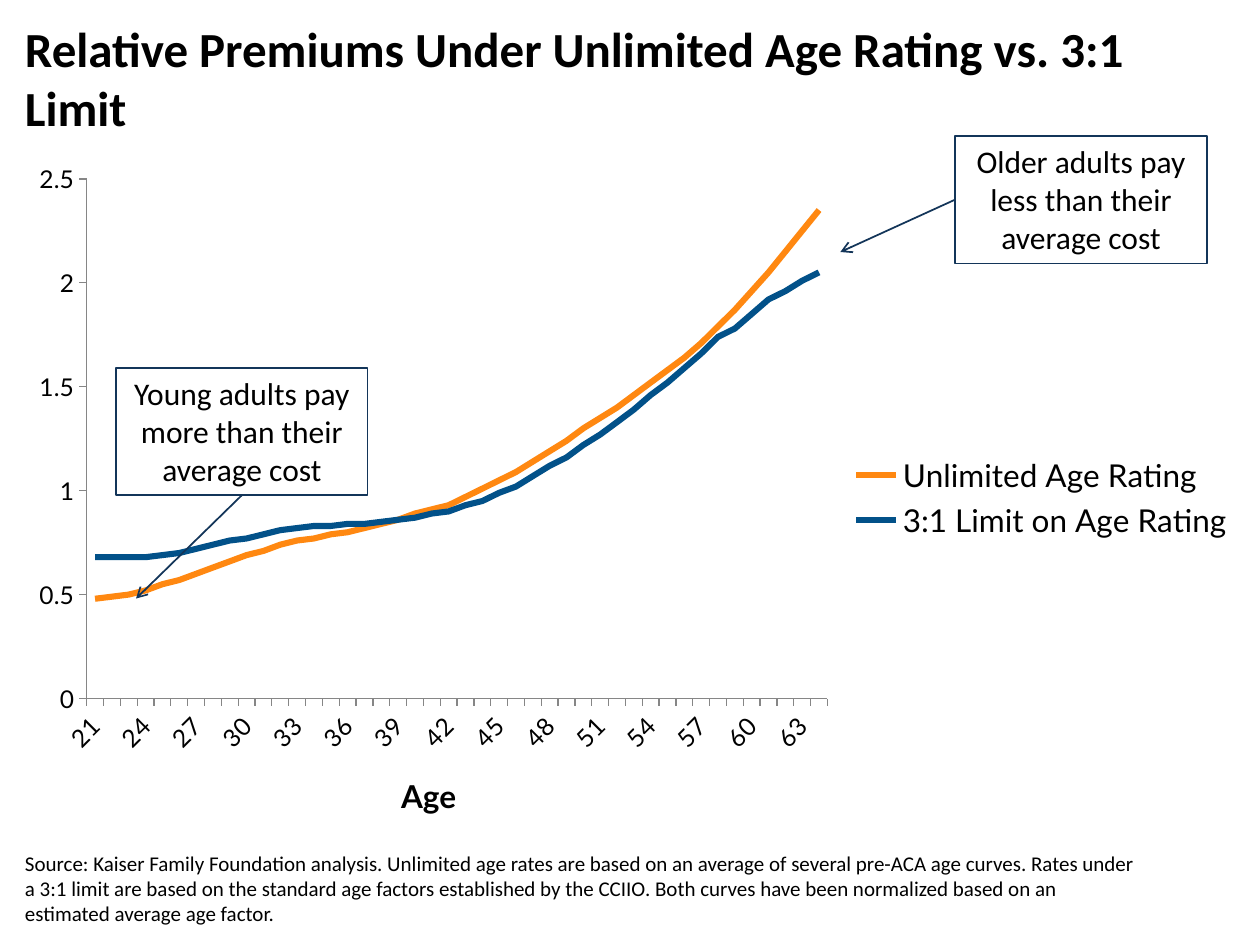
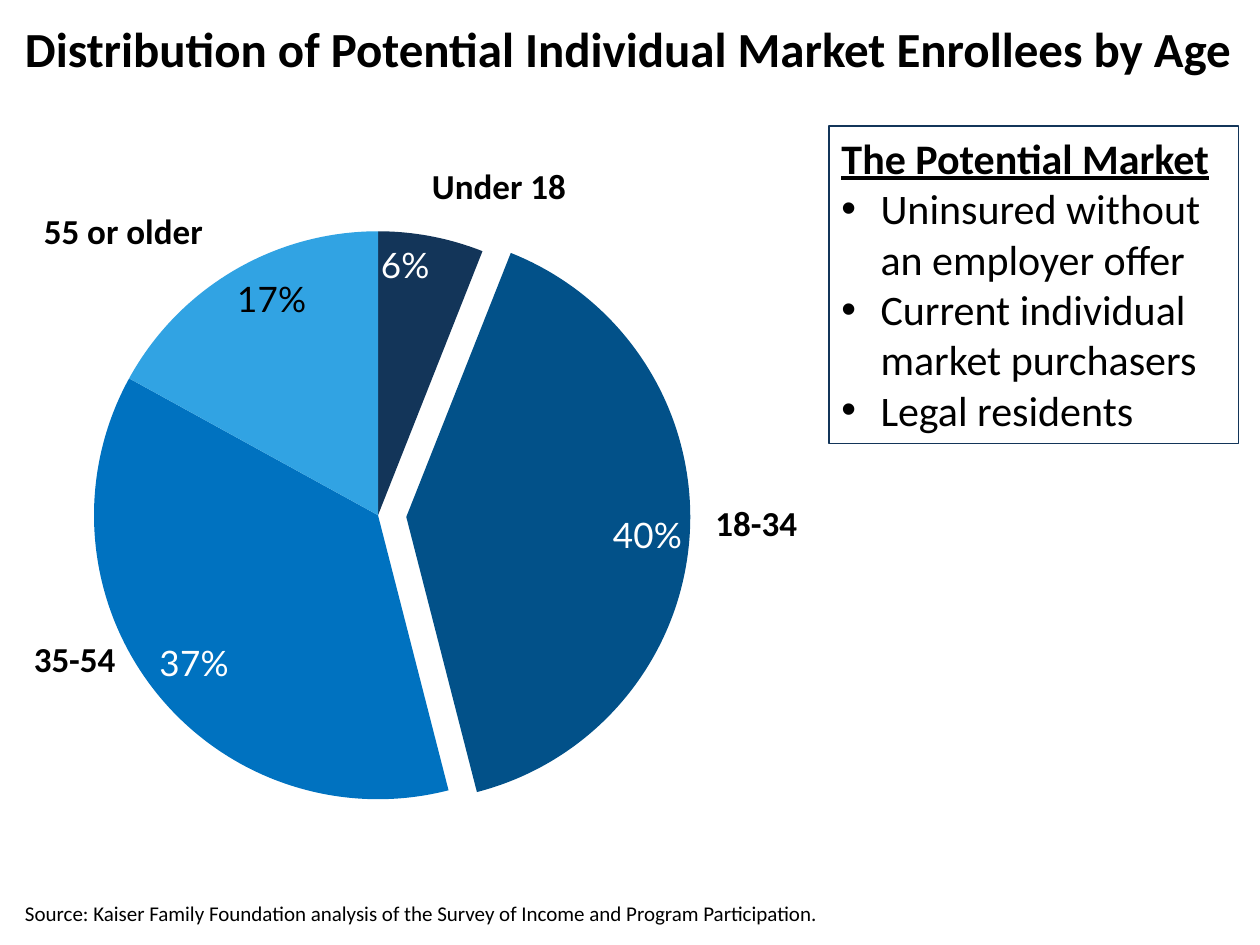
from lxml.etree import SubElement
from pptx import Presentation
from pptx.chart.data import CategoryChartData
from pptx.dml.color import RGBColor
from pptx.enum.chart import XL_CHART_TYPE, XL_LABEL_POSITION, XL_LEGEND_POSITION, XL_TICK_MARK
from pptx.enum.shapes import MSO_CONNECTOR, MSO_SHAPE
from pptx.enum.text import MSO_ANCHOR, PP_ALIGN
from pptx.oxml.ns import qn
from pptx.util import Inches, Pt

# ---- Content -------------------------------------------------------------
PREMIUMS = {
    "title": "Relative Premiums Under Unlimited Age Rating vs. 3:1 Limit",
    "source": "Source: Kaiser Family Foundation analysis. Unlimited age rates are based on an "
              "average of several pre-ACA age curves. Rates under a 3:1 limit are based on the "
              "standard age factors established by the CCIIO. Both curves have been normalized "
              "based on an estimated average age factor.",
    "axis": "Age",
    "ages": range(21, 65),
    "curves": {
        "Unlimited Age Rating": (
            0.48, 0.49, 0.5, 0.52, 0.55, 0.57, 0.6, 0.63, 0.66, 0.69, 0.71,
            0.74, 0.76, 0.77, 0.79, 0.8, 0.82, 0.84, 0.86, 0.89, 0.91, 0.93,
            0.97, 1.01, 1.05, 1.09, 1.14, 1.19, 1.24, 1.3, 1.35, 1.4, 1.46,
            1.52, 1.58, 1.64, 1.71, 1.79, 1.87, 1.96, 2.05, 2.15, 2.25, 2.35),
        "3:1 Limit on Age Rating": (
            0.68, 0.68, 0.68, 0.68, 0.69, 0.7, 0.72, 0.74, 0.76, 0.77, 0.79,
            0.81, 0.82, 0.83, 0.83, 0.84, 0.84, 0.85, 0.86, 0.87, 0.89, 0.9,
            0.93, 0.95, 0.99, 1.02, 1.07, 1.12, 1.16, 1.22, 1.27, 1.33, 1.39,
            1.46, 1.52, 1.59, 1.66, 1.74, 1.78, 1.85, 1.92, 1.96, 2.01, 2.05),
    },
    # text, left and top of the box, side the arrow leaves from, arrow tip
    "callouts": [
        ("Young adults pay more than their average cost", (0.92, 2.92), 2, (1.08, 4.75)),
        ("Older adults pay less than their average cost", (7.58, 1.08), 1, (6.67, 2)),
    ],
}
ENROLLEES = {
    "title": "Distribution of Potential Individual Market Enrollees by Age",
    "source": "Source: Kaiser Family Foundation analysis of the Survey of Income and "
              "Program Participation.",
    "shares": (0.06, 0.4, 0.37, 0.17),
    "pulled_out": 1,
    "dark_label": 3,
    "age_groups": [("18-34", 5.58, 3.93), ("Under 18", 3.33, 1.26),
                   ("55 or older", 0.25, 1.61), ("35-54", 0.17, 5.01)],
    "market": "The Potential Market",
    "criteria": ["Uninsured without an employer offer",
                 "Current individual market purchasers", "Legal residents"],
}


# ---- Theme and grid ------------------------------------------------------
class Theme:
    text_font, chart_font = "Calibri", "Lato"
    black, white, axis = (RGBColor.from_string(c) for c in ("000000", "FFFFFF", "868686"))
    outline = RGBColor.from_string("133559")
    curves = [RGBColor.from_string(c) for c in ("FF8811", "025189")]
    slices = [RGBColor.from_string(c) for c in ("133559", "025189", "0072C0", "31A3E3")]
    title, heading, label, body, tick, source = (Pt(n) for n in (28, 24, 20, 18, 14, 12))


WIDTH, HEIGHT, MARGIN = 10, 7.5, 0.1
FULL = WIDTH - 2 * MARGIN
TITLE_AREA = (MARGIN, MARGIN, FULL, 1)
SOURCE_AREA = (MARGIN, 6.8, 9.1, 0.6)
CHART_SIZE = (FULL, 5.5)
CALLOUT_SIZE = (2, 1.01)
MARKET_AREA = (6.58, 1, 3.25, 2.52)
BULLET_INDENT = Inches(0.31)


# ---- Helpers -------------------------------------------------------------
def inches(lengths):
    return [Inches(n) for n in lengths]


def apply(target, **values):
    for name, value in values.items():
        setattr(target, name, value)


def set_font(font, size, color=Theme.black, name=Theme.text_font, **values):
    apply(font, size=size, name=name, **values)
    font.color.rgb = color


def write(shape, lines, size, align=PP_ALIGN.LEFT, anchor=MSO_ANCHOR.TOP, **values):
    apply(shape.text_frame, word_wrap=True, vertical_anchor=anchor)
    for index, line in enumerate(lines):
        paragraph = shape.text_frame.paragraphs[0] if index == 0 else shape.text_frame.add_paragraph()
        apply(paragraph, text=line, alignment=align)
        set_font(paragraph.runs[0].font, size, **values)
    return shape


def text(slide, area, line, size, **values):
    return write(slide.shapes.add_textbox(*inches(area)), [line], size, **values)


def outlined_box(slide, area):
    box = slide.shapes.add_shape(MSO_SHAPE.RECTANGLE, *inches(area))
    box.shadow.inherit = False
    box.fill.background()
    box.line.color.rgb = Theme.outline
    box.line.width = Pt(0.75)
    return box


def arrow(slide, box, side, tip):
    x, y = inches(tip)
    connector = slide.shapes.add_connector(MSO_CONNECTOR.STRAIGHT, x, y, x, y)
    connector.begin_connect(box, side)
    connector.line.color.rgb = Theme.outline
    connector.line.width = Pt(1)
    SubElement(connector.line._get_or_add_ln(), qn("a:tailEnd"), type="arrow")
    SubElement(connector._element.spPr, qn("a:effectLst"))


def bullet(paragraph):
    properties = paragraph._p.get_or_add_pPr()
    properties.set("marL", str(BULLET_INDENT))
    properties.set("indent", str(-BULLET_INDENT))
    SubElement(properties, qn("a:buFont"), typeface="Arial")
    SubElement(properties, qn("a:buChar"), char="•")


def place(parent, **shares):
    """Fix a chart part at shares (x, y, w, h) of the chart's size."""
    layout = parent.find(qn("c:layout"))
    if layout is None:
        layout = parent.makeelement(qn("c:layout"))
        before = parent.find(qn("c:tx"))
        parent.insert(0 if before is None else parent.index(before) + 1, layout)
    manual = SubElement(layout, qn("c:manualLayout"))
    if "w" in shares:
        SubElement(manual, qn("c:layoutTarget"), val="inner")
    for side in "xy":
        SubElement(manual, qn(f"c:{side}Mode"), val="edge")
    for side, share in shares.items():
        SubElement(manual, qn(f"c:{side}"), val=str(share))


def add_chart(slide, kind, corner, categories, series, number_format, plot):
    data = CategoryChartData(number_format=number_format)
    data.categories = categories
    for name, values in series.items():
        data.add_series(name, values)
    chart = slide.shapes.add_chart(kind, *inches(corner + CHART_SIZE), data).chart
    apply(chart, has_title=False, has_legend=False)
    set_font(chart.font, Theme.body, name=Theme.chart_font)
    place(chart._chartSpace.chart.plotArea, **plot)
    return chart


def new_slide(deck, content):
    slide = deck.slides.add_slide(deck.slide_layouts[6])
    text(slide, TITLE_AREA, content["title"], Theme.title, bold=True)
    text(slide, SOURCE_AREA, content["source"], Theme.source, anchor=MSO_ANCHOR.BOTTOM)
    return slide


# ---- Slides --------------------------------------------------------------
def premiums_slide(deck):
    slide = new_slide(deck, PREMIUMS)
    chart = add_chart(slide, XL_CHART_TYPE.LINE, (MARGIN, 1.2),
                      [str(age) for age in PREMIUMS["ages"]], PREMIUMS["curves"], "General",
                      dict(x=0.06, y=0.04, w=0.6, h=0.75))
    chart.plots[0].vary_by_categories = False
    for curve, color in zip(chart.plots[0].series, Theme.curves):
        curve.smooth = False
        curve.format.line.color.rgb = color
        curve.format.line.width = Pt(3.5)

    ages, ratio = chart.category_axis, chart.value_axis
    for axis in (ages, ratio):
        apply(axis, has_major_gridlines=False, major_tick_mark=XL_TICK_MARK.OUTSIDE,
              minor_tick_mark=XL_TICK_MARK.NONE)
        set_font(axis.tick_labels.font, Theme.tick, name=Theme.chart_font)
        axis.format.line.color.rgb = Theme.axis
    apply(ratio, minimum_scale=0, maximum_scale=2.5, major_unit=0.5)
    ages._element.find(qn("c:txPr")).find(qn("a:bodyPr")).set("rot", "-2700000")
    skip = ages._element.makeelement(qn("c:tickLblSkip"), val="3")
    ages._element.find(qn("c:noMultiLvlLbl")).addprevious(skip)
    ages.axis_title.text_frame.text = PREMIUMS["axis"]
    set_font(ages.axis_title.text_frame.paragraphs[0].runs[0].font, Theme.body,
             name=Theme.chart_font, bold=True)
    place(ages.axis_title._element, x=0.31, y=0.89)

    chart.has_legend = True
    apply(chart.legend, position=XL_LEGEND_POSITION.RIGHT, include_in_layout=False)
    set_font(chart.legend.font, Theme.body, name=Theme.chart_font)

    for message, corner, side, tip in PREMIUMS["callouts"]:
        box = outlined_box(slide, corner + CALLOUT_SIZE)
        write(box, [message], Theme.body, align=PP_ALIGN.CENTER)
        arrow(slide, box, side, tip)


def enrollees_slide(deck):
    slide = new_slide(deck, ENROLLEES)
    shares = ENROLLEES["shares"]
    chart = add_chart(slide, XL_CHART_TYPE.PIE, (-1.9, 1.23),
                      [str(n + 1) for n in range(len(shares))], {"Series 1": shares}, "0%",
                      dict(x=0.27, y=0.11, w=0.46, h=0.82))
    pie = chart.plots[0]
    pie.vary_by_categories = True
    pie.has_data_labels = True
    apply(pie.data_labels, show_value=True, show_percentage=False, number_format="0%",
          number_format_is_linked=False, position=XL_LABEL_POSITION.INSIDE_END)
    set_font(pie.data_labels.font, Theme.label, Theme.white, Theme.chart_font)

    points = pie.series[0].points
    for index, color in enumerate(Theme.slices):
        points[index].format.fill.solid()
        points[index].format.fill.fore_color.rgb = color
        label = points[index].data_label
        set_font(label.font, Theme.label, name=Theme.chart_font,
                 color=Theme.black if index == ENROLLEES["dark_label"] else Theme.white)
        label.position = XL_LABEL_POSITION.INSIDE_END
    pulled = pie.series[0]._element.findall(qn("c:dPt"))[ENROLLEES["pulled_out"]]
    pulled.find(qn("c:spPr")).addprevious(pulled.makeelement(qn("c:explosion"), val="10"))

    for group, left, top in ENROLLEES["age_groups"]:
        text(slide, (left, top, 1.5, 0.44), group, Theme.label, bold=True)

    box = outlined_box(slide, MARKET_AREA)
    write(box, [ENROLLEES["market"], *ENROLLEES["criteria"]], Theme.heading)
    heading, *criteria = box.text_frame.paragraphs
    apply(heading.runs[0].font, bold=True, underline=True)
    for criterion in criteria:
        bullet(criterion)


def main():
    deck = Presentation()
    apply(deck, slide_width=Inches(WIDTH), slide_height=Inches(HEIGHT))
    premiums_slide(deck)
    enrollees_slide(deck)
    deck.save("out.pptx")


if __name__ == "__main__":
    main()
